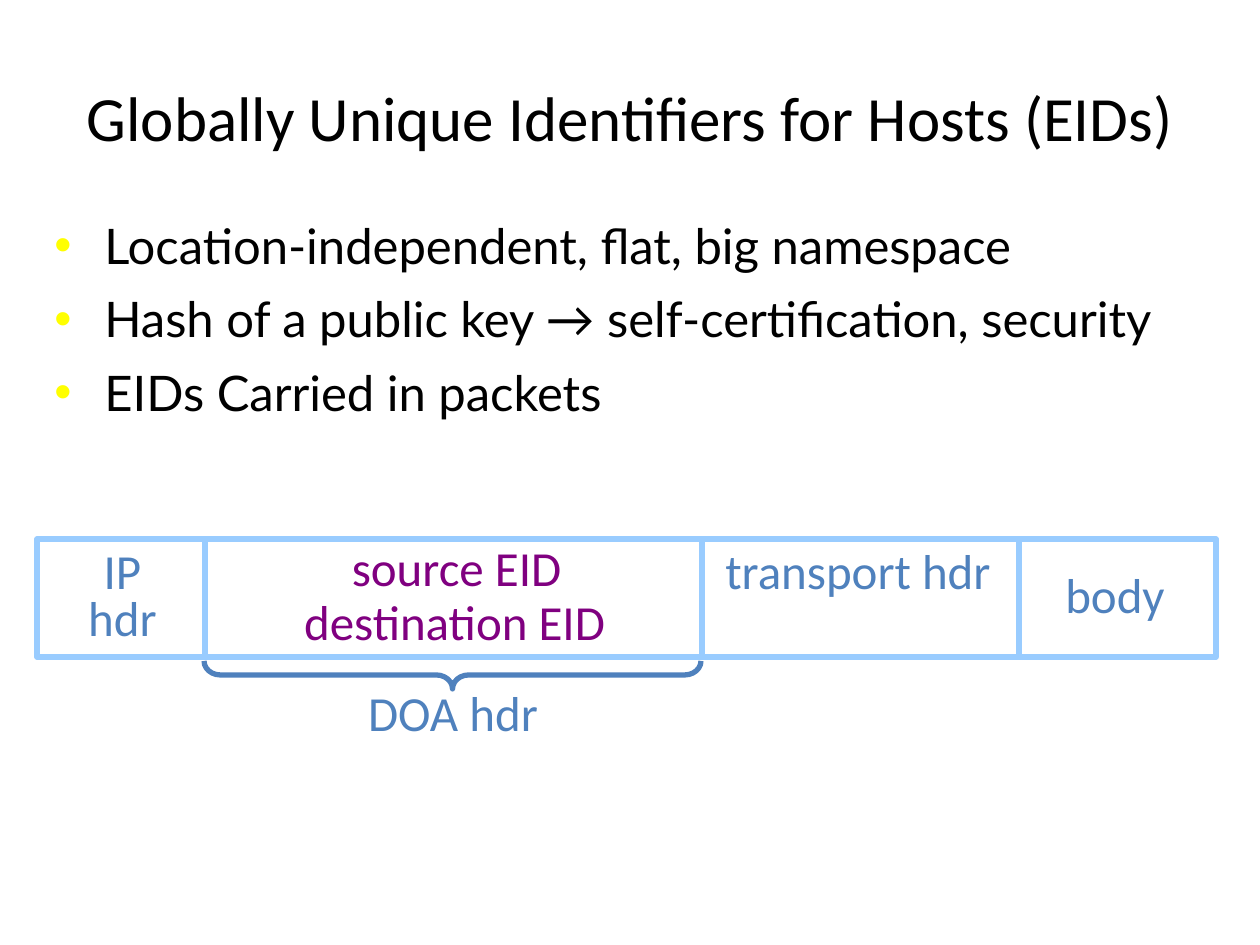
import pptx
import pptx.util
import pptx.dml.color
import pptx.enum.shapes
import pptx.enum.text
import lxml.etree

HUES = {"ink": "000000", "dot": "FFFF00", "blue": "4F81BD",
        "edge": "99CCFF", "plum": "800080", "white": "FFFFFF"}
TITLE = "Globally Unique Identifiers for Hosts (EIDs)"
POINTS = ["Location-independent, flat, big namespace",
          "Hash of a public key → self-certification, security",
          "EIDs Carried in packets"]
# Packet labels: lines, box in px, colour
LABELS = [
    (["IP", "hdr"], (40, 546, 165, 107), "blue"),
    (["source EID"], (212, 543, 489, 59), "plum"),
    (["destination EID"], (212, 597, 485, 59), "plum"),
    (["transport hdr"], (702, 546, 312, 107), "blue"),
    (["DOA hdr"], (208, 688, 490, 59), "blue"),
]
BODY = (["body"], (1021, 536, 188, 115), "blue")
PACKET = (37, 539, 1179, 118)
SPLITS = [205, 702, 1019]
BRACE = (204, 661, 497, 28)

SCALE = 914400 / 126
MID = pptx.enum.text.MSO_ANCHOR.MIDDLE
SHAPES = pptx.enum.shapes.MSO_SHAPE


def emu(*vals):
    return [pptx.util.Emu(round(v * SCALE)) for v in vals]


def hue(name):
    return pptx.dml.color.RGBColor.from_string(HUES[name])


def sub(node, tag, **attrs):
    return lxml.etree.SubElement(node, pptx.oxml.ns.qn(tag), attrs)


def stroke(item, name):
    item.line.color.rgb = hue(name)
    item.line.width = pptx.util.Pt(3)


def write(lines, box, name, size=28, face="Calibri", center=True,
          gap=0, lead=None, anchor=None):
    frame = slide.shapes.add_textbox(*emu(*box)).text_frame
    frame.word_wrap = True
    frame.vertical_anchor = anchor or pptx.enum.text.MSO_ANCHOR.TOP
    frame.text = "\n".join(lines)
    for num, para in enumerate(frame.paragraphs):
        para.font.size = pptx.util.Pt(size)
        para.font.name = face
        para.font.color.rgb = hue(name)
        if center:
            para.alignment = pptx.enum.text.PP_ALIGN.CENTER
        if lead:
            para.line_spacing = lead
        if num and gap:
            para.space_before = pptx.util.Pt(gap)
    return frame


def bullet(para):
    props = para._p.get_or_add_pPr()
    inset = emu(50)[0]
    props.set("marL", str(inset))
    props.set("indent", str(-inset))
    tint = lxml.etree.Element(pptx.oxml.ns.qn("a:buClr"))
    sub(tint, "a:srgbClr", val=HUES["dot"])
    font = lxml.etree.Element(pptx.oxml.ns.qn("a:buFont"), typeface="Arial")
    mark = lxml.etree.Element(pptx.oxml.ns.qn("a:buChar"), char="•")
    # Bullet marks must stand before the default run properties
    tail = props.find(pptx.oxml.ns.qn("a:defRPr"))
    for node in (tint, font, mark):
        tail.addprevious(node)


deck = pptx.Presentation()
deck.slide_width, deck.slide_height = emu(1260, 945)
slide = deck.slides.add_slide(deck.slide_layouts[6])

# Title and bullets
write([TITLE], (63, 38, 1134, 157), "ink", size=36, anchor=MID)
for para in write(POINTS, (42, 209, 1187, 146), "ink", face="Lato",
                  center=False, gap=8.4).paragraphs:
    bullet(para)

# Packet frame and its dividers
frame = slide.shapes.add_shape(SHAPES.RECTANGLE, *emu(*PACKET))
frame.shadow.inherit = False
frame.fill.solid()
frame.fill.fore_color.rgb = hue("white")
stroke(frame, "edge")
top, base = PACKET[1], PACKET[1] + PACKET[3]
for x in SPLITS:
    rule = slide.shapes.add_connector(
        pptx.enum.shapes.MSO_CONNECTOR.STRAIGHT, *emu(x, top, x, base))
    stroke(rule, "edge")
    sub(rule._element.spPr, "a:effectLst")

# Packet labels
for lines, box, name in LABELS:
    write(lines, box, name, lead=0.8)
write(*BODY, anchor=MID)

# Brace under the DOA header: an upright brace turned a quarter
left, high, wide, tall = BRACE
brace = slide.shapes.add_shape(SHAPES.RIGHT_BRACE, *emu(
    left + (wide - tall) / 2, high + (tall - wide) / 2, tall, wide))
brace.rotation = 90
brace.adjustments[0] = 0.58
brace.adjustments[1] = 0.5
brace.shadow.inherit = False
brace.fill.background()
stroke(brace, "blue")

deck.save("out.pptx")
